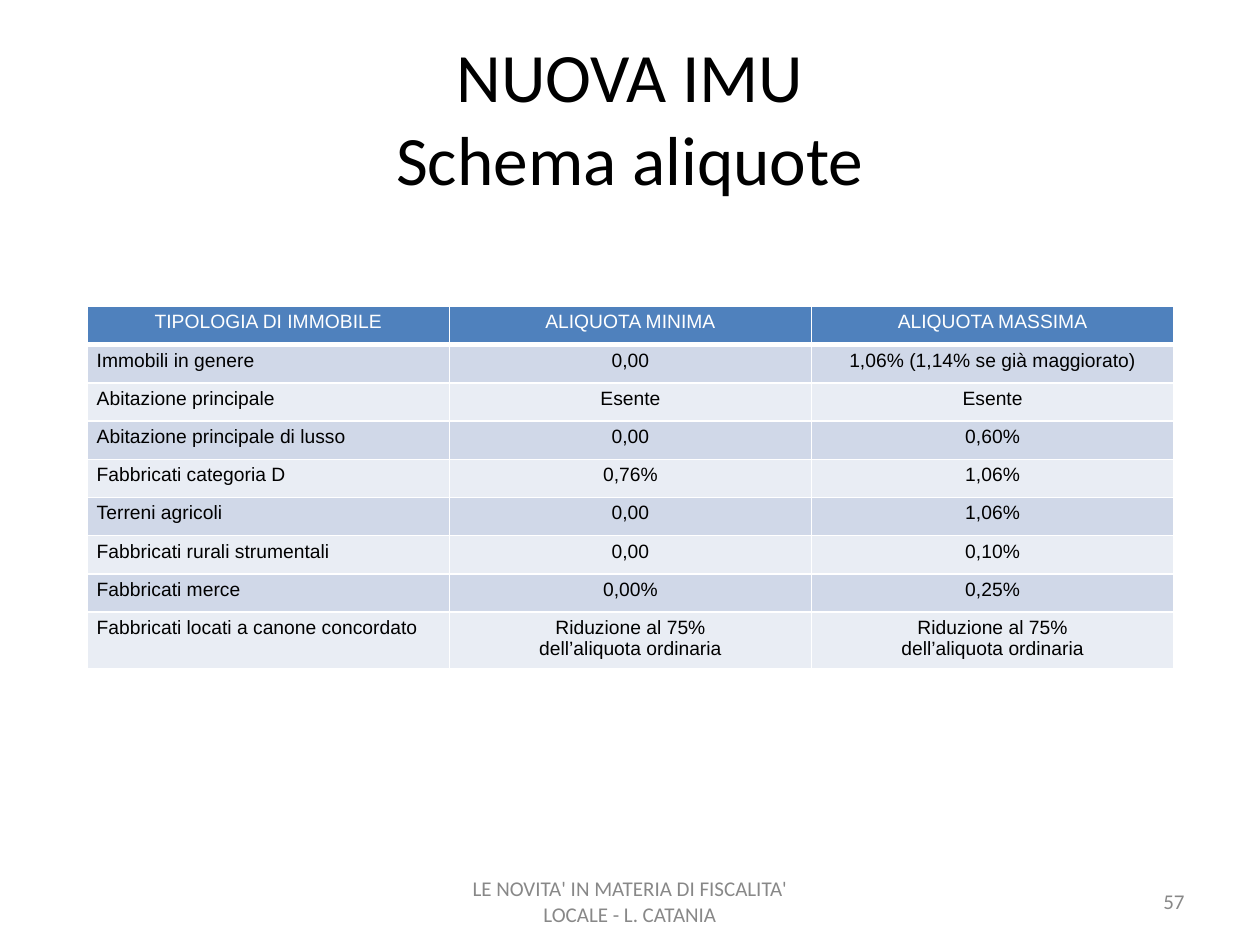
"""Build the slide with the table of minimum and maximum IMU rates."""
from lxml.etree import SubElement
from pptx import Presentation
from pptx.dml.color import RGBColor
from pptx.enum.text import MSO_ANCHOR, PP_ALIGN
from pptx.oxml.ns import qn
from pptx.util import Cm, Pt


def color(value):
    return RGBColor.from_string(value)


def add_run(paragraph, text, size, font, value, align):
    paragraph.alignment = align
    run = paragraph.add_run()
    run.text = text
    run.font.size = Pt(size)
    run.font.name = font
    run.font.color.rgb = color(value)


deck = Presentation()
deck.slide_width, deck.slide_height = Cm(25.4), Cm(19.05)
slide = deck.slides.add_slide(deck.slide_layouts[6])

captions = [
    (1.27, 0.76, 22.86, 3.18, ["NUOVA IMU", "Schema aliquote"], 39.6, "000000", PP_ALIGN.CENTER),
    (8.68, 17.66, 8.04, 1.01, ["LE NOVITA' IN MATERIA DI FISCALITA' LOCALE - L. CATANIA"],
     12, "888888", PP_ALIGN.CENTER),
    (18.2, 17.66, 5.93, 1.01, ["57"], 12, "888888", PP_ALIGN.RIGHT),
]
for left, top, width, height, lines, size, value, align in captions:
    frame = slide.shapes.add_textbox(Cm(left), Cm(top), Cm(width), Cm(height)).text_frame
    frame.word_wrap = True
    frame.vertical_anchor = MSO_ANCHOR.MIDDLE
    paragraph = frame.paragraphs[0]
    for index, line in enumerate(lines):
        if index:
            paragraph.add_line_break()
        add_run(paragraph, line, size, "Calibri", value, align)

reduction = "Riduzione al 75%\ndell’aliquota ordinaria"
rates = [
    ("TIPOLOGIA DI IMMOBILE", "ALIQUOTA MINIMA", "ALIQUOTA MASSIMA"),
    ("Immobili in genere", "0,00", "1,06% (1,14% se già maggiorato)"),
    ("Abitazione principale", "Esente", "Esente"),
    ("Abitazione principale di lusso", "0,00", "0,60%"),
    ("Fabbricati categoria D", "0,76%", "1,06%"),
    ("Terreni agricoli", "0,00", "1,06%"),
    ("Fabbricati rurali strumentali", "0,00", "0,10%"),
    ("Fabbricati merce", "0,00%", "0,25%"),
    ("Fabbricati locati a canone concordato", reduction, reduction),
]
row_heights = [0.77] * 8 + [1.07]
table = slide.shapes.add_table(
    len(rates), 3, Cm(1.76), Cm(6.18), Cm(21.9), Cm(sum(row_heights))
).table
for column in table.columns:
    column.width = Cm(7.3)

for row, (height, texts) in enumerate(zip(row_heights, rates)):
    table.rows[row].height = Cm(height)
    header = row == 0
    fill = "4F81BD" if header else ("E9EDF4", "D0D8E8")[row % 2]
    for column, text in enumerate(texts):
        cell = table.cell(row, column)
        cell.margin_left = cell.margin_right = Cm(0.19)
        cell.margin_top = cell.margin_bottom = Cm(0.1)
        align = PP_ALIGN.CENTER if header or column else PP_ALIGN.LEFT
        for index, line in enumerate(text.split("\n")):
            frame = cell.text_frame
            paragraph = frame.add_paragraph() if index else frame.paragraphs[0]
            add_run(paragraph, line, 11, "Arial", "FFFFFF" if header else "000000", align)
        properties = cell._tc.get_or_add_tcPr()
        for side in ("lnL", "lnR", "lnT", "lnB"):
            weight = 3 if header and side == "lnB" else 1
            border = SubElement(properties, qn(f"a:{side}"), w=str(Pt(weight)))
            solid = SubElement(border, qn("a:solidFill"))
            SubElement(solid, qn("a:srgbClr"), val="FFFFFF")
        cell.fill.solid()
        cell.fill.fore_color.rgb = color(fill)

deck.save("out.pptx")
